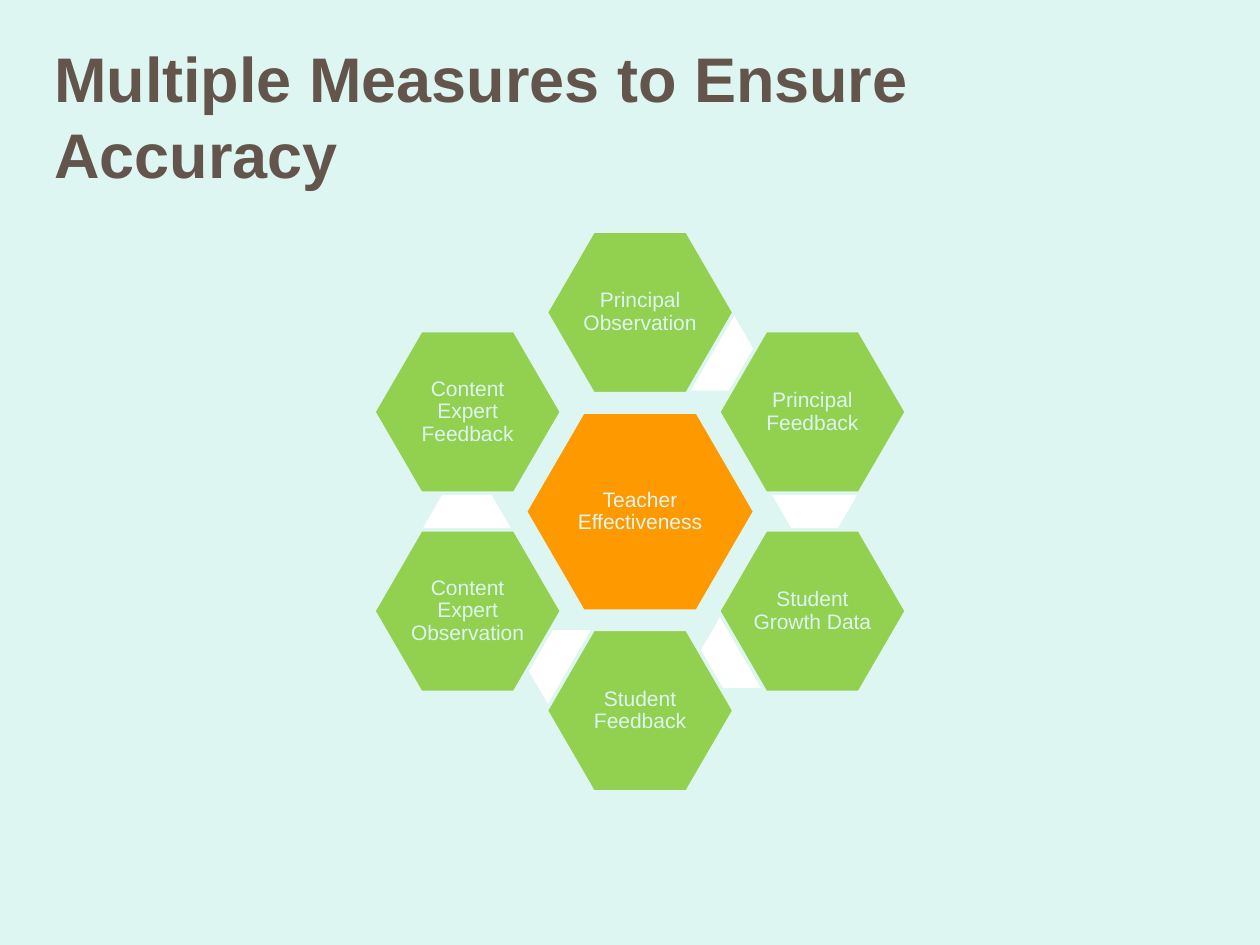
import math

import pptx
import pptx.dml.color
import pptx.enum.shapes
import pptx.enum.text
import pptx.util
from pptx.util import Inches

COLORS = {
    "background": "DEF6F1",
    "title": "63554C",
    "center": "FF9900",
    "measure": "92D050",
    "link": "FFFFFF",
}
FONT = "Arial"
TITLE = "Multiple Measures to Ensure Accuracy"
CENTER_LABEL = "Teacher Effectiveness"
MEASURES = [
    ("Principal Observation", (5.31, 2.51)),
    ("Principal Feedback", (6.12, 3.62)),
    ("Student Growth Data", (5.56, 4.87)),
    ("Student Feedback", (4.18, 5)),
    ("Content Expert Observation", (3.36, 3.89)),
    ("Content Expert Feedback", None),
]
CENTER_X, CENTER_Y, RADIUS = 5.08, 4.06, 1.58
CENTER_SIZE = (1.82, 1.58)
MEASURE_SIZE = (1.49, 1.29)
LINK_SIZE = (0.69, 0.59)


def color(name):
    return pptx.dml.color.RGBColor.from_string(COLORS[name])


def add_span(para, text, size, color_name, bold=False):
    span = para.add_run()
    span.text = text
    span.font.name = FONT
    span.font.size = pptx.util.Pt(size)
    span.font.bold = bold
    span.font.color.rgb = color(color_name)


def add_hexagon(group, left, top, size, fill):
    box = group.shapes.add_shape(
        pptx.enum.shapes.MSO_SHAPE.HEXAGON,
        Inches(left), Inches(top), Inches(size[0]), Inches(size[1]),
    )
    box.adjustments[0] = 0.29
    box.shadow.inherit = False
    box.fill.solid()
    box.fill.fore_color.rgb = color(fill)
    box.line.fill.background()
    return box


def add_labeled_hexagon(group, x, y, size, fill, label):
    box = add_hexagon(group, x - size[0] / 2, y - size[1] / 2, size, fill)
    box.line.color.rgb = color("background")
    box.line.width = pptx.util.Pt(2)
    frame = box.text_frame
    frame.word_wrap = True
    frame.vertical_anchor = pptx.enum.text.MSO_ANCHOR.MIDDLE
    frame.margin_left = frame.margin_right = Inches(0.02)
    frame.margin_top = frame.margin_bottom = Inches(0.02)
    para = frame.paragraphs[0]
    para.alignment = pptx.enum.text.PP_ALIGN.CENTER
    para.line_spacing = 0.9
    para.space_after = pptx.util.Pt(4.2)
    add_span(para, label, 12, "background")


def add_title(page):
    box = page.shapes.title
    box.left, box.top = Inches(0.33), Inches(0.33)
    box.width, box.height = Inches(9.33), Inches(1.17)
    frame = box.text_frame
    frame.word_wrap = True
    frame.auto_size = pptx.enum.text.MSO_AUTO_SIZE.NONE
    frame.vertical_anchor = pptx.enum.text.MSO_ANCHOR.MIDDLE
    para = frame.paragraphs[0]
    para.alignment = pptx.enum.text.PP_ALIGN.LEFT
    add_span(para, TITLE, 36, "title", bold=True)


def add_diagram(page):
    group = page.shapes.add_group_shape()
    add_labeled_hexagon(group, CENTER_X, CENTER_Y, CENTER_SIZE, "center", CENTER_LABEL)
    for index, (label, link) in enumerate(MEASURES):
        if link:
            add_hexagon(group, *link, LINK_SIZE, "link")
        angle = math.tau * index / len(MEASURES)
        x = CENTER_X + RADIUS * math.sin(angle)
        y = CENTER_Y - RADIUS * math.cos(angle)
        add_labeled_hexagon(group, x, y, MEASURE_SIZE, "measure", label)


def main():
    deck = pptx.Presentation()
    deck.slide_width, deck.slide_height = Inches(10), Inches(7.5)
    page = deck.slides.add_slide(deck.slide_layouts[5])
    page.background.fill.solid()
    page.background.fill.fore_color.rgb = color("background")
    add_title(page)
    add_diagram(page)
    deck.save("out.pptx")


if __name__ == "__main__":
    main()
